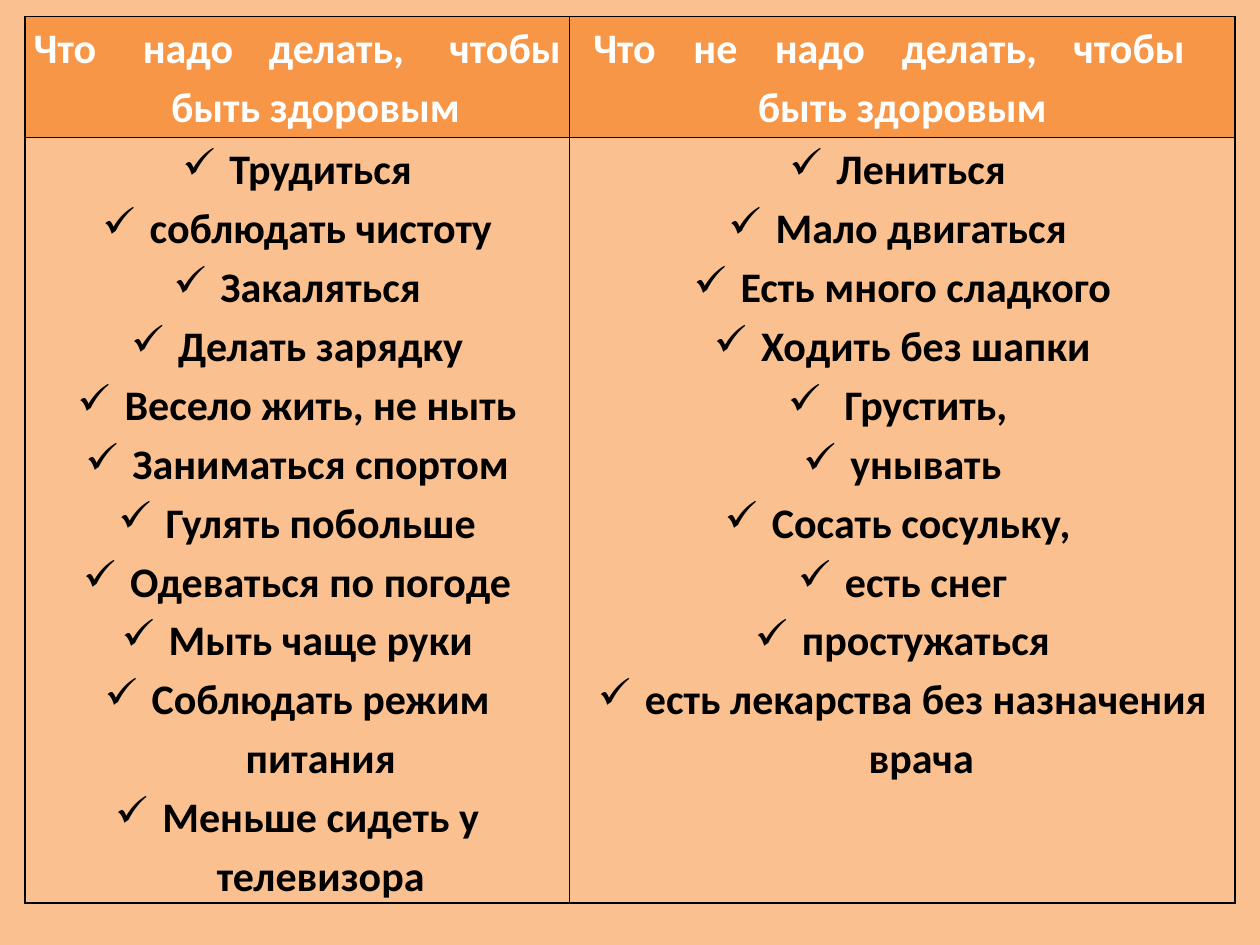
import pptx
import pptx.dml.color
import pptx.enum.text
import pptx.oxml.ns
import pptx.util
from lxml import etree

Cm = pptx.util.Cm
Pt = pptx.util.Pt
RGBColor = pptx.dml.color.RGBColor
PP_ALIGN = pptx.enum.text.PP_ALIGN
qn = pptx.oxml.ns.qn

PEACH = RGBColor(0xFA, 0xC0, 0x90)
ORANGE = RGBColor(0xF7, 0x96, 0x46)
WHITE = RGBColor(0xFF, 0xFF, 0xFF)
BLACK = RGBColor(0, 0, 0)

DO_WORDS = ["Что", "надо", "делать,", "чтобы"]
DO_STOPS = [2.2, 4.74, 8.38]
AVOID_WORDS = ["Что", "не", "надо", "делать,", "чтобы"]
AVOID_STOPS = [2.02, 3.66, 6.22, 9.68]
HEADING_END = "быть здоровым"

DO_HABITS = [
    "Трудиться",
    "соблюдать чистоту",
    "Закаляться",
    "Делать зарядку",
    "Весело жить, не ныть",
    "Заниматься спортом",
    "Гулять побольше",
    "Одеваться по погоде",
    "Мыть чаще руки",
    "Соблюдать режим питания",
    "Меньше сидеть у телевизора",
]
AVOID_HABITS = [
    "Лениться ",
    "Мало двигаться ",
    "Есть много сладкого",
    "Ходить без шапки",
    " Грустить, ",
    "унывать",
    "Сосать сосульку, ",
    "есть снег",
    "простужаться",
    "есть лекарства без назначения врача ",
]


class HealthSlide:
    font_name = "Calibri"
    font_size = Pt(24)
    line_spacing = 1.15
    bullet_indent = Cm(0.95)
    cell_margin = Cm(0.18)

    def __init__(self, deck):
        self.slide = deck.slides.add_slide(deck.slide_layouts[6])
        background = self.slide.background.fill
        background.solid()
        background.fore_color.rgb = PEACH

    def table(self, left, top, widths, heights):
        table = self.slide.shapes.add_table(
            len(heights), len(widths), left, top, sum(widths), sum(heights)).table
        table.horz_banding = False
        for column, width in zip(table.columns, widths):
            column.width = width
        for row, height in zip(table.rows, heights):
            row.height = height
        for cell in table.iter_cells():
            cell.margin_left = cell.margin_right = self.cell_margin
            cell.margin_top = cell.margin_bottom = 0
            self.borders(cell)
        return table

    def borders(self, cell):
        properties = cell._tc.get_or_add_tcPr()
        for side in ("a:lnL", "a:lnR", "a:lnT", "a:lnB"):
            line = etree.SubElement(properties, qn(side), w=str(Pt(1)))
            fill = etree.SubElement(line, qn("a:solidFill"))
            etree.SubElement(fill, qn("a:srgbClr"), val=str(BLACK))

    def paragraph(self, frame, text, color, align=PP_ALIGN.CENTER,
                  indent=0, bullet=None, stops=()):
        first = frame.paragraphs[0]
        paragraph = first if not first.runs else frame.add_paragraph()
        paragraph.text = text
        paragraph.alignment = align
        paragraph.line_spacing = self.line_spacing
        properties = paragraph._p.get_or_add_pPr()
        properties.set("marL", str(indent))
        if bullet:
            properties.set("indent", str(-indent))
            etree.SubElement(properties, qn("a:buChar"), char=bullet)
        if stops:
            tabs = etree.SubElement(properties, qn("a:tabLst"))
            for stop in stops:
                etree.SubElement(tabs, qn("a:tab"), pos=str(Cm(stop)), algn="l")
        font = paragraph.font
        font.name, font.size, font.bold = self.font_name, self.font_size, True
        font.color.rgb = color

    def heading(self, cell, words, stops, left, right, end_indent):
        cell.margin_left, cell.margin_right = left, right
        cell.fill.solid()
        cell.fill.fore_color.rgb = ORANGE
        # Tab stops spread the first line across the column
        self.paragraph(cell.text_frame, "\t".join(words), WHITE,
                       align=PP_ALIGN.LEFT, stops=stops)
        self.paragraph(cell.text_frame, HEADING_END, WHITE, indent=end_indent)

    def checklist(self, cell, habits):
        cell.fill.background()
        for habit in habits:
            self.paragraph(cell.text_frame, habit, BLACK,
                           indent=self.bullet_indent, bullet="✓")


def main():
    deck = pptx.Presentation()
    deck.slide_width, deck.slide_height = Cm(25.4), Cm(19.05)
    page = HealthSlide(deck)
    habits = page.table(Cm(0.5), Cm(0.33),
                        [Cm(10.98), Cm(13.42)], [Cm(2.44), Cm(14.96)])

    # Column headings
    page.heading(habits.cell(0, 0), DO_WORDS, DO_STOPS,
                 page.cell_margin, 0, Cm(0.56))
    page.heading(habits.cell(0, 1), AVOID_WORDS, AVOID_STOPS,
                 Cm(0.48), Cm(0.48), 0)

    # Habits to keep and to avoid
    page.checklist(habits.cell(1, 0), DO_HABITS)
    page.checklist(habits.cell(1, 1), AVOID_HABITS)

    deck.save("out.pptx")


if __name__ == "__main__":
    main()
